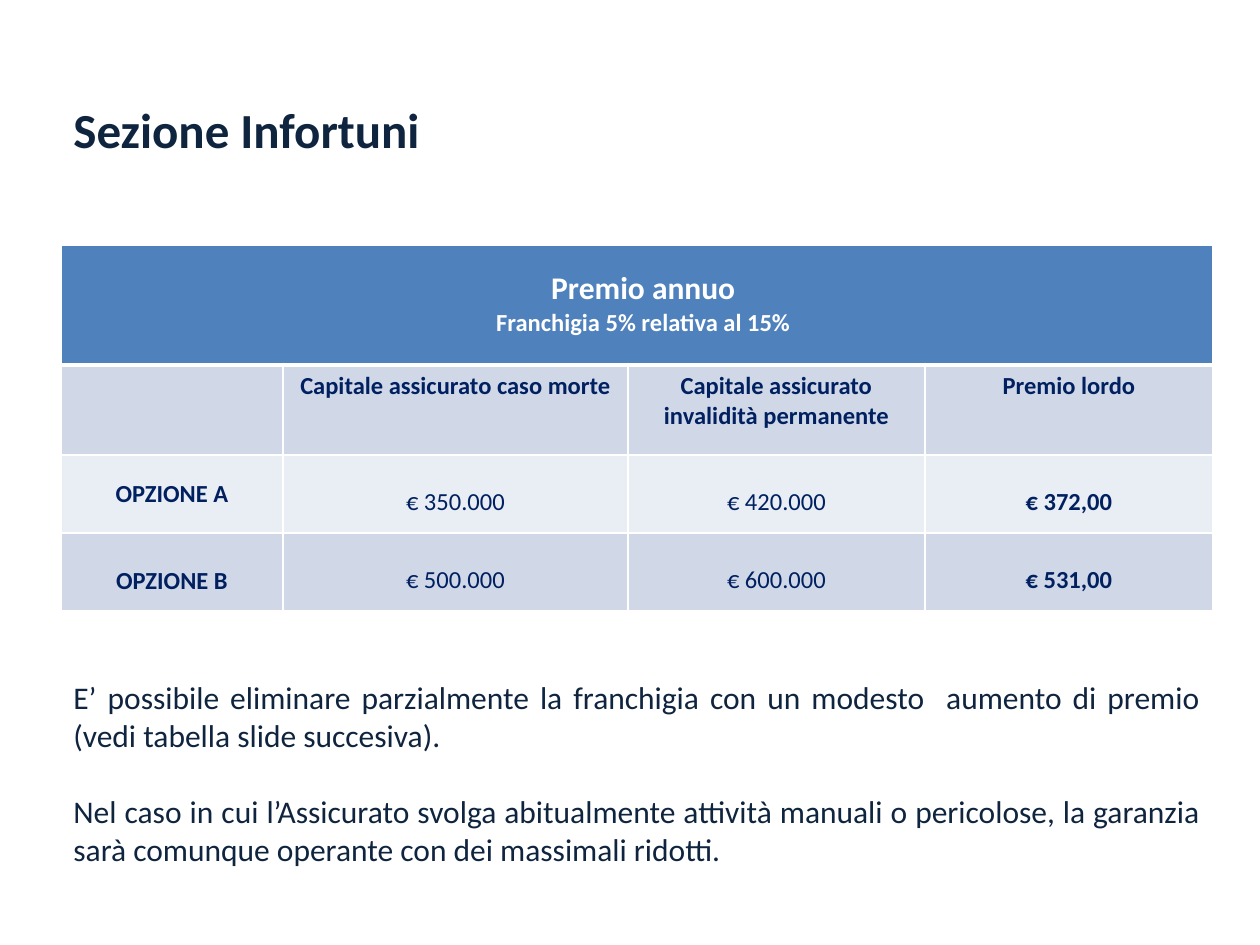
from lxml.etree import SubElement
from pptx import Presentation
from pptx.dml.color import RGBColor
from pptx.enum.text import MSO_ANCHOR as Anchor, PP_ALIGN as Align
from pptx.oxml.ns import qn
from pptx.util import Pt

PX = 914400 // 126
FONT = "Calibri"
DARK, NAVY, WHITE = "0F243E", "002060", "FFFFFF"
HEADER_FILL, BAND_DARK, BAND_LIGHT = "4F81BD", "D0D8E8", "E9EDF4"

COLUMN_WIDTHS = [222, 345, 297, 288]
ROW_HEIGHTS = [120, 90, 78, 78]
COLUMN_TITLES = ["", "Capitale assicurato caso morte",
                 "Capitale assicurato invalidità permanente", "Premio lordo"]
OPTIONS = [
    (["OPZIONE A", "€ 350.000", "€ 420.000", "€ 372,00"], BAND_LIGHT, 6),
    (["OPZIONE B", "€ 500.000", "€ 600.000", "€ 531,00"], BAND_DARK, 25),
]


def color(hex_code):
    return RGBColor.from_string(hex_code)


def write(frame, lines, hex_code, align, gap=0):
    """Fill a text frame with (text, size, bold) paragraphs, gap points apart."""
    for index, (text, size, bold) in enumerate(lines):
        paragraph = frame.add_paragraph() if index else frame.paragraphs[0]
        paragraph.text = text
        paragraph.alignment = align
        if index and gap:
            paragraph.space_before = Pt(gap)
        font = paragraph.font
        font.name, font.size, font.bold = FONT, Pt(size), bold
        font.color.rgb = color(hex_code)


def add_text(slide, box, lines, gap=0):
    frame = slide.shapes.add_textbox(*(n * PX for n in box)).text_frame
    frame.word_wrap = True
    write(frame, lines, DARK, Align.JUSTIFY, gap)


def set_borders(cell, top, bottom):
    """Draw white borders; they must precede the fill in the cell properties."""
    properties = cell._tc.get_or_add_tcPr()
    for side, width in (("L", 1), ("R", 1), ("T", top), ("B", bottom)):
        line = SubElement(properties, qn(f"a:ln{side}"), w=str(Pt(width)))
        fill = SubElement(line, qn("a:solidFill"))
        SubElement(fill, qn("a:srgbClr"), val=WHITE)


def style_cell(cell, fill, top=1, bottom=1):
    set_borders(cell, top, bottom)
    cell.fill.solid()
    cell.fill.fore_color.rgb = color(fill)


def fill_option(cells, values, fill, label_top):
    for column, (cell, value) in enumerate(zip(cells, values)):
        style_cell(cell, fill)
        cell.vertical_anchor = Anchor.MIDDLE
        cell.margin_top = (16 if column else label_top) * PX
        cell.margin_bottom = (0 if column else 6) * PX
        write(cell.text_frame, [(value, 14, column in (0, 3))], NAVY, Align.CENTER)


def add_premium_table(slide, box):
    table = slide.shapes.add_table(len(ROW_HEIGHTS), len(COLUMN_WIDTHS),
                                   *(n * PX for n in box)).table
    for column, width in zip(table.columns, COLUMN_WIDTHS):
        column.width = width * PX
    for row, height in zip(table.rows, ROW_HEIGHTS):
        row.height = height * PX
    header_row, title_row, *option_rows = table.rows

    for cell in header_row.cells:
        style_cell(cell, HEADER_FILL, bottom=3)
    header = table.cell(0, 0)
    header.merge(table.cell(0, len(COLUMN_WIDTHS) - 1))
    header.margin_top = 25 * PX
    header.margin_right = header.margin_bottom = 0
    write(header.text_frame, [("Premio annuo", 18, True),
                              ("Franchigia 5% relativa al 15%", 14, True)],
          WHITE, Align.CENTER)

    for cell, title in zip(title_row.cells, COLUMN_TITLES):
        style_cell(cell, BAND_DARK, top=3)
        write(cell.text_frame, [(title, 14, True)], NAVY, Align.CENTER)
    for row, (values, fill, label_top) in zip(option_rows, OPTIONS):
        fill_option(row.cells, values, fill, label_top)


def main():
    presentation = Presentation()
    presentation.slide_width, presentation.slide_height = 1260 * PX, 945 * PX
    slide = presentation.slides.add_slide(presentation.slide_layouts[6])
    add_text(slide, (61, 93, 704, 72), [("Sezione Infortuni", 28, True)])
    add_premium_table(slide, (61, 245, sum(COLUMN_WIDTHS), sum(ROW_HEIGHTS)))
    add_text(slide, (61, 672, 1152, 204), [
        ("E’ possibile eliminare parzialmente la franchigia con un modesto  "
         "aumento di premio (vedi tabella slide succesiva).", 18, False),
        ("Nel caso in cui l’Assicurato svolga abitualmente attività manuali o "
         "pericolose, la garanzia sarà comunque operante con dei massimali "
         "ridotti.", 18, False),
    ], gap=22)
    presentation.save("out.pptx")


if __name__ == "__main__":
    main()
